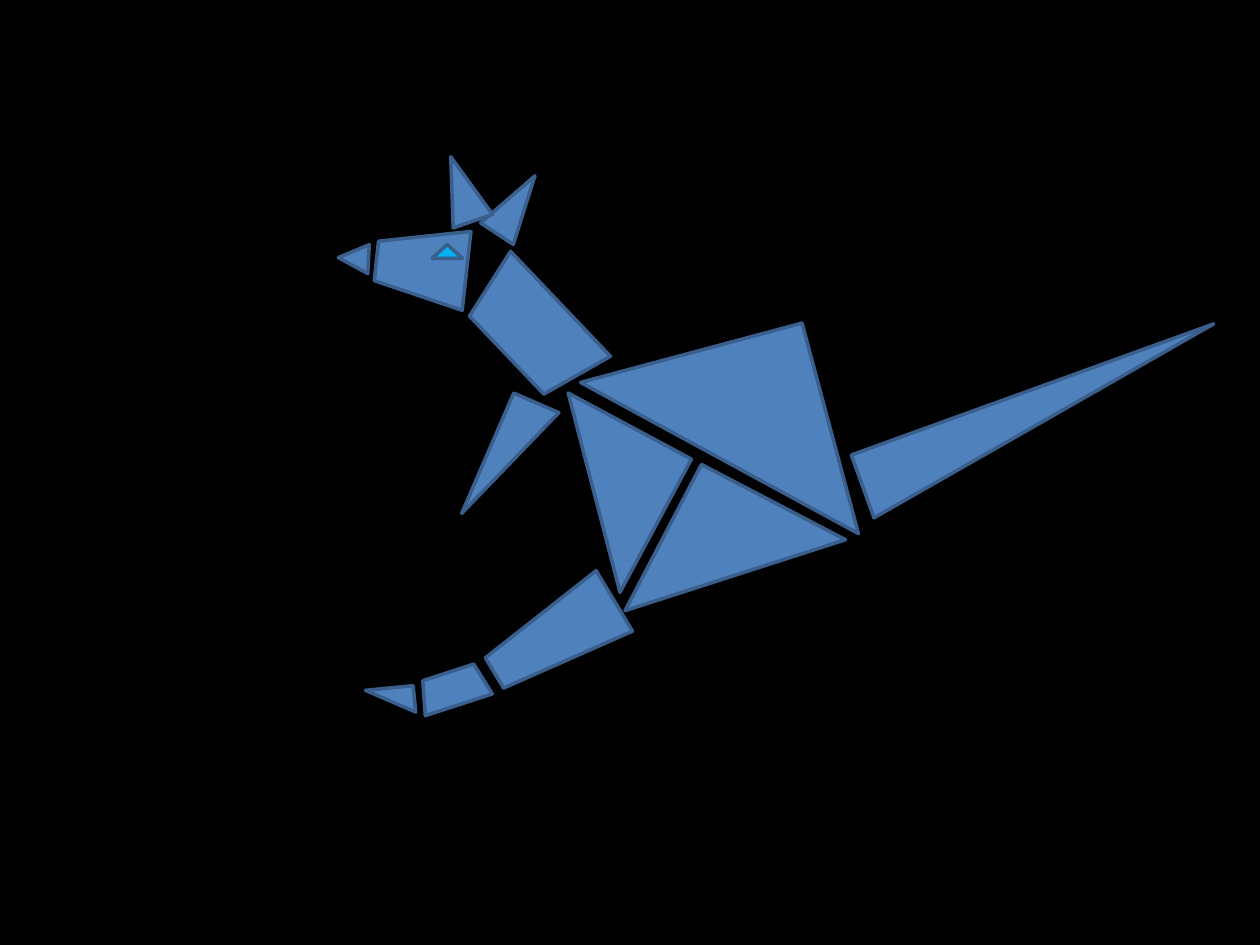
from dataclasses import dataclass

from pptx import Presentation
from pptx.dml.color import RGBColor
from pptx.enum.shapes import MSO_SHAPE as SHAPE
from pptx.util import Inches, Pt


@dataclass(frozen=True)
class Theme:
    background = RGBColor.from_string("000000")
    body = RGBColor.from_string("4F81BD")
    eye = RGBColor.from_string("00B0F0")
    outline = RGBColor.from_string("3A5F8C")
    outline_width = Pt(2)


theme = Theme()
TRIANGLE = SHAPE.ISOSCELES_TRIANGLE
RIGHT = SHAPE.RIGHT_TRIANGLE
TRAPEZOID = SHAPE.TRAPEZOID

prs = Presentation()
prs.slide_width, prs.slide_height = Inches(10), Inches(7.5)
s = prs.slides.add_slide(prs.slide_layouts[6])
s.background.fill.solid()
s.background.fill.fore_color.rgb = theme.background

# Kangaroo pieces, back to front: preset, left, top, width, height, rotation, fill
pieces = [
    (TRIANGLE, 3.94, 1.35, 0.31, 0.55, 33.3, theme.body),  # right ear
    (TRAPEZOID, 3.03, 1.75, 0.63, 0.72, 276.3, theme.body),  # head
    (TRIANGLE, 2.69, 1.93, 0.23, 0.24, 273, theme.body),  # nose
    (TRIANGLE, 3.43, 1.94, 0.24, 0.11, 0, theme.eye),  # eye
    (TRAPEZOID, 3.66, 2.32, 1.15, 0.59, 226.4, theme.body),  # neck
    (TRIANGLE, 3.5, 1.23, 0.33, 0.54, 341, theme.body),  # left ear
    (RIGHT, 4.16, 3.31, 1.11, 1.2, 208.2, theme.body),  # belly
    (RIGHT, 4.8, 2.77, 1.82, 1.73, 165, theme.body),  # back
    (RIGHT, 3.53, 3.48, 1.04, 0.39, 113.4, theme.body),  # arm
    (RIGHT, 8.02, 1.81, 0.53, 3.06, 70.1, theme.body),  # tail
    (RIGHT, 5.18, 3.92, 1.31, 1.29, 117.6, theme.body),  # thigh
    (TRAPEZOID, 4.12, 4.5, 0.56, 1.11, 239, theme.body),  # shin
    (TRAPEZOID, 3.32, 5.33, 0.56, 0.27, 342, theme.body),  # foot
    (RIGHT, 2.91, 5.46, 0.38, 0.21, 174.4, theme.body),  # toe
]

for preset, left, top, width, height, rotation, fill in pieces:
    sp = s.shapes.add_shape(
        preset, Inches(left), Inches(top), Inches(width), Inches(height)
    )
    sp.rotation = rotation
    sp.shadow.inherit = False
    sp.fill.solid()
    sp.fill.fore_color.rgb = fill
    sp.line.color.rgb = theme.outline
    sp.line.width = theme.outline_width

prs.save("out.pptx")
